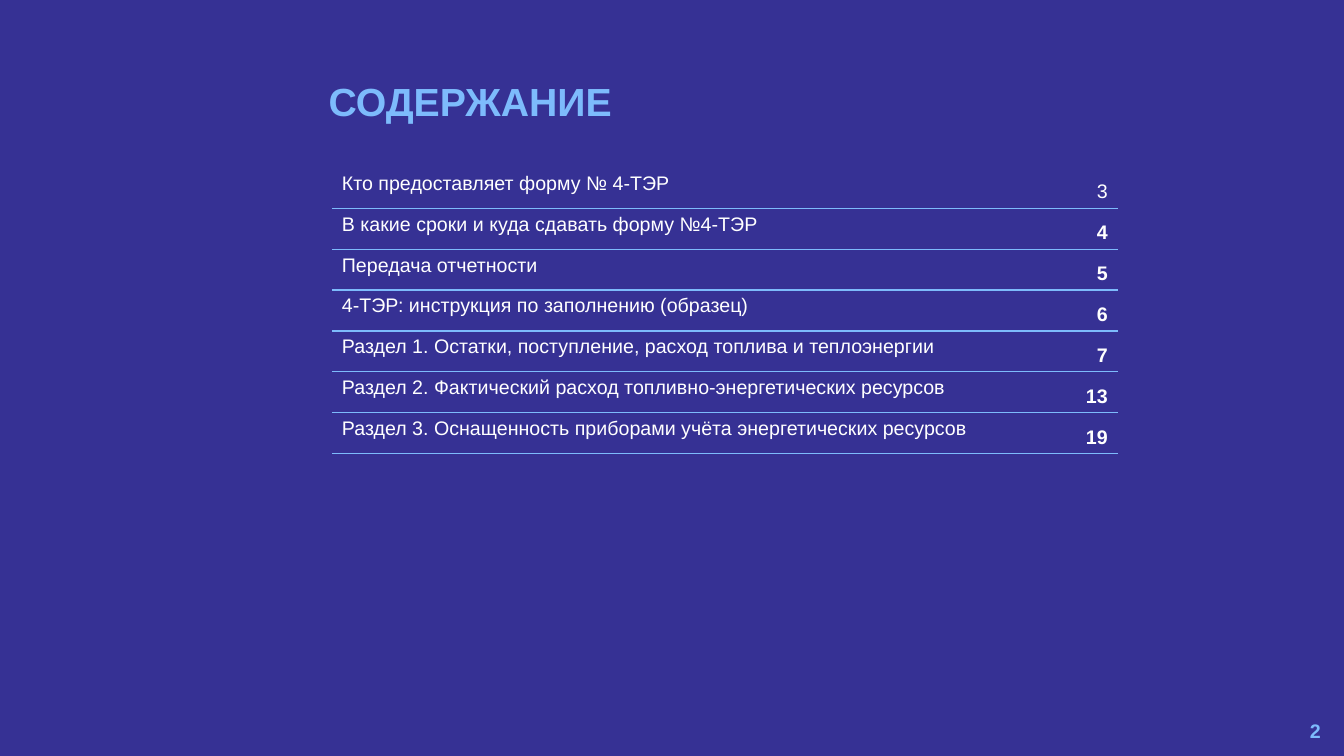
from lxml.etree import SubElement
from pptx import Presentation
from pptx.dml.color import RGBColor
from pptx.enum.text import MSO_ANCHOR, PP_ALIGN
from pptx.oxml import parse_xml
from pptx.oxml.ns import nsdecls, qn
from pptx.util import Pt

HUES = {"back": "363194", "sky": "7DBBFC", "text": "FFFFFF"}
FONT = "Arial"
PLAIN = "{2D5ABB26-0587-4C30-8999-92F81FD0307C}"  # table style without grid
ITEMS = [
    ("Кто предоставляет форму № 4-ТЭР", 3),
    ("В какие сроки и куда сдавать форму №4-ТЭР", 4),
    ("Передача отчетности", 5),
    ("4-ТЭР: инструкция по заполнению (образец)", 6),
    ("Раздел 1. Остатки, поступление, расход топлива и теплоэнергии", 7),
    ("Раздел 2. Фактический расход топливно-энергетических ресурсов", 13),
    ("Раздел 3. Оснащенность приборами учёта энергетических ресурсов", 19),
]


def write(frame, text, size, hue, bold=False, align=PP_ALIGN.LEFT):
    para = frame.paragraphs[0]
    para.text = text
    para.alignment = align
    font = para.font
    font.name, font.size, font.bold = FONT, Pt(size), bold
    font.color.rgb = RGBColor.from_string(HUES[hue])
    return para


def add_title(slide, left, top, width, height):
    title = slide.shapes.title
    title.left, title.top = Pt(left), Pt(top)
    title.width, title.height = Pt(width), Pt(height)
    frame = title.text_frame
    frame.word_wrap = True
    frame.vertical_anchor = MSO_ANCHOR.TOP
    write(frame, "СОДЕРЖАНИЕ", 28, "sky", True).line_spacing = 0.9


def add_rule(cell, width):
    """Draw the line under a cell."""
    line = parse_xml(f'<a:lnB {nsdecls("a")} w="{Pt(width)}"/>')
    fill = SubElement(line, qn("a:solidFill"))
    SubElement(fill, qn("a:srgbClr"), val=HUES["sky"])
    cell._tc.get_or_add_tcPr().insert(0, line)


def add_list(slide, left, top, width, height):
    frame = slide.shapes.add_table(
        len(ITEMS), 2, Pt(left), Pt(top), Pt(width), Pt(height))
    table = frame.table
    table.first_row = table.horz_banding = False
    table._tbl.tblPr.find(qn("a:tableStyleId")).text = PLAIN
    page = 49.5  # width of the page column
    table.columns[0].width = Pt(width - page)
    table.columns[1].width = Pt(page)

    for row, (name, num) in enumerate(ITEMS):
        table.rows[row].height = Pt(height / len(ITEMS))
        label, count = table.cell(row, 0), table.cell(row, 1)
        write(label.text_frame, name, 14, "text")
        write(count.text_frame, str(num), 14, "text", row > 0, PP_ALIGN.RIGHT)
        count.vertical_anchor = MSO_ANCHOR.BOTTOM
        for cell in (label, count):
            cell.fill.background()
            add_rule(cell, 1)


def add_number(slide, left, top, width, height):
    box = slide.shapes.add_textbox(Pt(left), Pt(top), Pt(width), Pt(height))
    frame = box.text_frame
    frame.word_wrap = True
    frame.vertical_anchor = MSO_ANCHOR.MIDDLE
    write(frame, "2", 14, "sky", True, PP_ALIGN.RIGHT)


def main():
    deck = Presentation()
    deck.slide_width, deck.slide_height = Pt(960), Pt(540)
    slide = deck.slides.add_slide(deck.slide_layouts[5])
    back = slide.background.fill
    back.solid()
    back.fore_color.rgb = RGBColor.from_string(HUES["back"])

    # Heading, contents table, page number
    add_title(slide, 227.5, 55.5, 732, 80)
    add_list(slide, 237, 119.5, 561.5, 204.75)
    add_number(slide, 734.5, 507.5, 216, 29)
    deck.save("out.pptx")


if __name__ == "__main__":
    main()
